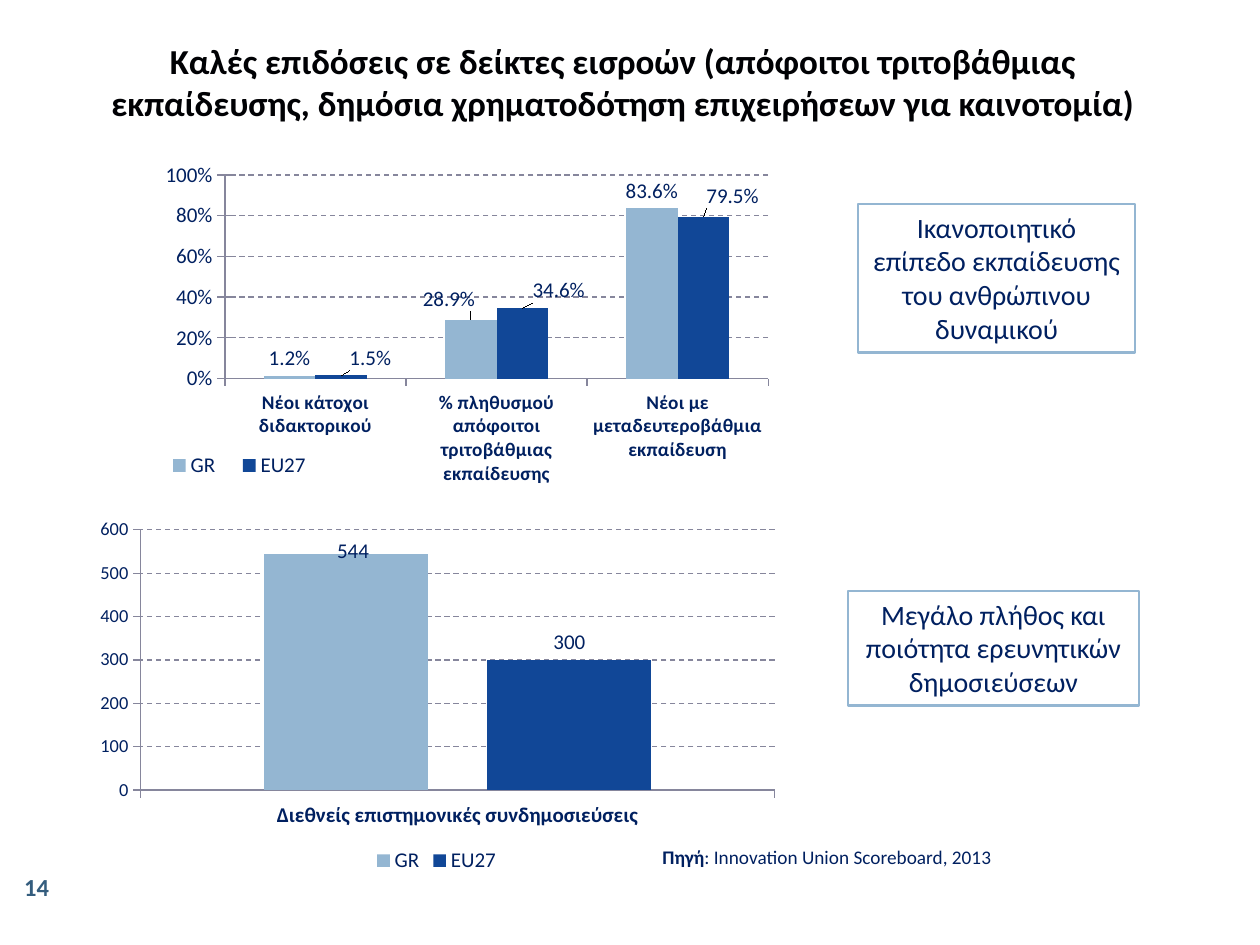
from dataclasses import dataclass, field

from lxml import etree
from pptx import Presentation
from pptx.chart.data import CategoryChartData
from pptx.dml.color import RGBColor
from pptx.enum.chart import XL_CHART_TYPE, XL_LABEL_POSITION, XL_LEGEND_POSITION, XL_TICK_MARK
from pptx.enum.dml import MSO_LINE
from pptx.enum.shapes import MSO_SHAPE
from pptx.enum.text import MSO_ANCHOR, PP_ALIGN
from pptx.oxml.ns import qn
from pptx.util import Inches, Pt

NAVY = RGBColor(0x00, 0x20, 0x60)
BLACK = RGBColor(0x00, 0x01, 0x04)
WHITE = RGBColor(0xFF, 0xFF, 0xFF)
LIGHT_BLUE = RGBColor(0x94, 0xB6, 0xD2)
DARK_BLUE = RGBColor(0x11, 0x47, 0x97)
STEEL = RGBColor(0x34, 0x5D, 0x7E)
GREY = RGBColor(0x86, 0x86, 0x9C)
FONT = "Calibri"


@dataclass(frozen=True)
class Area:
    left: float
    top: float
    width: float
    height: float

    def lengths(self) -> tuple:
        return tuple(Inches(n) for n in (self.left, self.top, self.width, self.height))


@dataclass(frozen=True)
class Series:
    name: str
    values: tuple
    color: RGBColor
    label_shifts: dict = field(default_factory=dict)


@dataclass(frozen=True)
class BarChart:
    area: Area
    plot: Area
    categories: tuple
    series: tuple
    axis_format: str
    label_format: str
    maximum: float
    step: float
    value_size: float
    category_size: float
    value_tick: XL_TICK_MARK
    overlap: int = 0
    legend: Area | None = None


@dataclass(frozen=True)
class Callout:
    area: Area
    text: str


CHARTS = (
    BarChart(
        Area(0.67, 4.06, 5.59, 2.91), Area(0.08, 0.05, 0.9, 0.71),
        ("Διεθνείς επιστημονικές συνδημοσιεύσεις",),
        (Series("GR", (544,), LIGHT_BLUE, {0: (0.01, 0.04)}),
         Series("EU27", (300,), DARK_BLUE)),
        "0", "0", 600, 100, 10.5, 12, XL_TICK_MARK.OUTSIDE, overlap=-36,
    ),
    BarChart(
        Area(0.75, 1.23, 5.75, 2.65), Area(0.18, 0.06, 0.75, 0.61),
        ("Νέοι κάτοχοι διδακτορικού",
         "% πληθυσμού απόφοιτοι τριτοβάθμιας εκπαίδευσης",
         "Νέοι με μεταδευτεροβάθμια εκπαίδευση"),
        (Series("GR", (0.012, 0.289, 0.836), LIGHT_BLUE, {1: (-0.03, -0.01)}),
         Series("EU27", (0.015, 0.346, 0.795), DARK_BLUE,
                {0: (0.04, 0), 1: (0.05, 0), 2: (0.04, -0.01)})),
        "0%", "0.0%", 1, 0.2, 12, 11, XL_TICK_MARK.CROSS,
        legend=Area(0.08, 0.88, 0.24, 0.1),
    ),
)
CALLOUTS = (
    Callout(Area(6.81, 1.62, 2.2, 1.18), "Ικανοποιητικό επίπεδο εκπαίδευσης του ανθρώπινου δυναμικού"),
    Callout(Area(6.73, 4.69, 2.31, 0.91), "Μεγάλο πλήθος και ποιότητα ερευνητικών δημοσιεύσεων"),
)


def style_font(font, size: float, color: RGBColor = NAVY, bold: bool = False) -> None:
    font.name = FONT
    font.size = Pt(size)
    font.bold = bold
    font.color.rgb = color


def make_layout(settings: dict):
    layout = etree.Element(qn("c:layout"))
    manual = etree.SubElement(layout, qn("c:manualLayout"))
    for tag, value in settings.items():
        etree.SubElement(manual, qn(f"c:{tag}")).set("val", str(value))
    return layout


def place_part(part, area: Area, inner: bool = False) -> None:
    for old in part.findall(qn("c:layout")):
        part.remove(old)
    settings = {"layoutTarget": "inner"} if inner else {}
    settings |= {"xMode": "edge", "yMode": "edge", "x": area.left, "y": area.top,
                 "w": area.width, "h": area.height}
    part.insert(0 if inner else 1, make_layout(settings))


def style_series(bars, series: Series, number_format: str) -> None:
    bars.format.fill.solid()
    bars.format.fill.fore_color.rgb = series.color
    labels = bars.data_labels
    labels.show_value = True
    labels.number_format = number_format
    labels.number_format_is_linked = False
    labels.position = XL_LABEL_POSITION.OUTSIDE_END
    style_font(labels.font, 12)
    for index, (x, y) in series.label_shifts.items():
        label = bars.points[index].data_label
        style_font(label.font, 12)
        label.position = XL_LABEL_POSITION.OUTSIDE_END
        element = bars._element.xpath(f'c:dLbls/c:dLbl[c:idx/@val="{index}"]')[0]
        element.insert(1, make_layout({"x": x, "y": y}))


def style_axes(chart, design: BarChart) -> None:
    values, categories = chart.value_axis, chart.category_axis
    values.minimum_scale = 0
    values.maximum_scale = design.maximum
    values.major_unit = design.step
    values.major_tick_mark = design.value_tick
    values.tick_labels.number_format = design.axis_format
    values.tick_labels.number_format_is_linked = False
    categories.major_tick_mark = XL_TICK_MARK.OUTSIDE
    style_font(values.tick_labels.font, design.value_size)
    style_font(categories.tick_labels.font, design.category_size, bold=True)
    grid = values.major_gridlines.format.line
    grid.dash_style = MSO_LINE.DASH
    for line in (grid, values.format.line, categories.format.line):
        line.color.rgb = GREY
        line.width = Pt(0.75)


def add_bar_chart(slide, design: BarChart) -> None:
    data = CategoryChartData(number_format=design.label_format)
    data.categories = design.categories
    for series in design.series:
        data.add_series(series.name, series.values)
    chart = slide.shapes.add_chart(
        XL_CHART_TYPE.COLUMN_CLUSTERED, *design.area.lengths(), data).chart
    style_font(chart.font, design.value_size)
    chart.has_title = False
    chart.has_legend = True
    chart.legend.position = XL_LEGEND_POSITION.BOTTOM
    chart.legend.include_in_layout = False
    style_font(chart.legend.font, 12)
    if design.legend:
        place_part(chart.legend._element, design.legend)
    plot = chart.plots[0]
    plot.vary_by_categories = False
    plot.gap_width = 150
    plot.overlap = design.overlap
    place_part(chart._chartSpace.chart.plotArea, design.plot, inner=True)
    style_axes(chart, design)
    for bars, series in zip(plot.series, design.series):
        style_series(bars, series, design.label_format)


def add_callout(slide, callout: Callout) -> None:
    box = slide.shapes.add_shape(MSO_SHAPE.RECTANGLE, *callout.area.lengths())
    box.shadow.inherit = False
    box.fill.solid()
    box.fill.fore_color.rgb = WHITE
    box.line.color.rgb = LIGHT_BLUE
    box.line.width = Pt(1.5)
    box.text_frame.vertical_anchor = MSO_ANCHOR.TOP
    para = box.text_frame.paragraphs[0]
    para.text = callout.text
    para.alignment = PP_ALIGN.CENTER
    style_font(para.font, 16)


def add_text_box(slide, area: Area):
    frame = slide.shapes.add_textbox(*area.lengths()).text_frame
    frame.word_wrap = True
    return frame


def set_title(slide, text: str, area: Area) -> None:
    title = slide.shapes.title
    title.left, title.top, title.width, title.height = area.lengths()
    title.text_frame.vertical_anchor = MSO_ANCHOR.MIDDLE
    para = title.text_frame.paragraphs[0]
    para.text = text
    para.alignment = PP_ALIGN.CENTER
    style_font(para.font, 20, BLACK, bold=True)


def main() -> None:
    deck = Presentation()
    deck.slide_width, deck.slide_height = Inches(10), Inches(7.5)
    slide = deck.slides.add_slide(deck.slide_layouts[5])
    set_title(slide, "Καλές επιδόσεις σε δείκτες εισροών (απόφοιτοι τριτοβάθμιας εκπαίδευσης, "
              "δημόσια χρηματοδότηση επιχειρήσεων για καινοτομία)", Area(0.69, 0.21, 8.51, 0.87))
    for design in CHARTS:
        add_bar_chart(slide, design)
    for callout in CALLOUTS:
        add_callout(slide, callout)
    source = add_text_box(slide, Area(5.16, 6.66, 4.1, 0.29)).paragraphs[0]
    for text, bold in (("Πηγή", True), (": Innovation Union Scoreboard, 2013", False)):
        span = source.add_run()
        span.text = text
        style_font(span.font, 11, bold=bold)
    number_frame = add_text_box(slide, Area(0, 6.83, 0.58, 0.42))
    number_frame.vertical_anchor = MSO_ANCHOR.MIDDLE
    number = number_frame.paragraphs[0]
    number.text = "14"
    number.alignment = PP_ALIGN.CENTER
    style_font(number.font, 14, STEEL, bold=True)
    deck.save("out.pptx")


if __name__ == "__main__":
    main()
